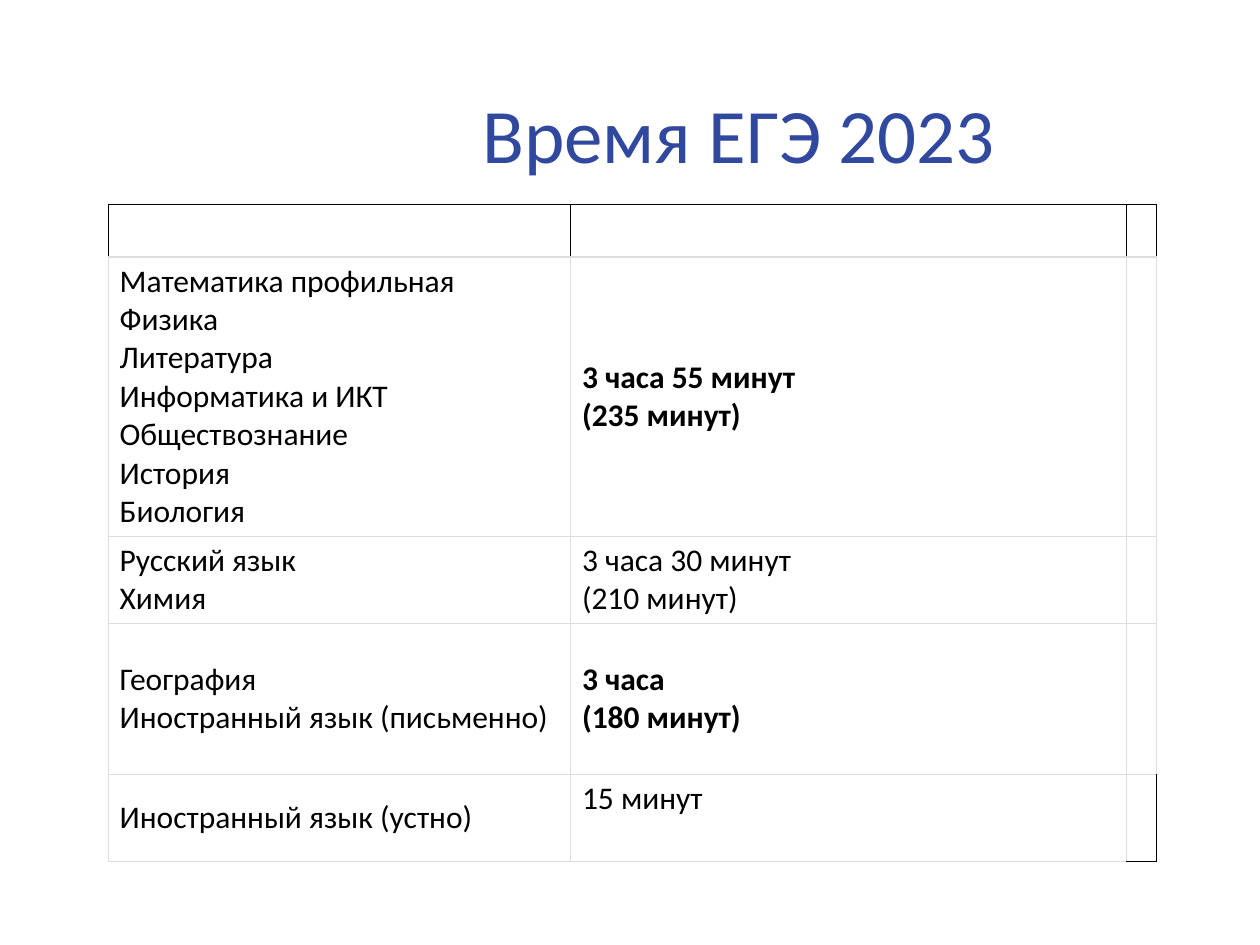
from lxml.etree import SubElement
from pptx import Presentation
from pptx.dml.color import RGBColor
from pptx.enum.text import MSO_ANCHOR, PP_ALIGN
from pptx.oxml.ns import qn
from pptx.util import Inches, Pt

BLUE = RGBColor(0x31, 0x48, 0x9F)
BLACK = RGBColor(0, 0, 0)
WHITE = RGBColor(0xFF, 0xFF, 0xFF)
GREY = RGBColor(0xDD, 0xDD, 0xDD)
FONT = "Calibri"

COLUMN_WIDTHS = [3.67, 4.41, 0.2]
ROW_HEIGHTS = [0.42, 2.1, 0.67, 1.2, 0.67]
EXAMS = [
    (["Математика профильная", "Физика", "Литература", "Информатика и ИКТ",
      "Обществознание", "История", "Биология"],
     ["3 часа 55 минут", "(235 минут)"], True),
    (["Русский язык", "Химия"], ["3 часа 30 минут", "(210 минут)"], False),
    (["География", "Иностранный язык (письменно)"],
     ["3 часа", "(180 минут)"], True),
    (["Иностранный язык (устно)"], ["15 минут", ""], False),
]


def style_run(run, size, color, bold=False):
    run.font.name = FONT
    run.font.size = Pt(size)
    run.font.bold = bold
    run.font.color.rgb = color


def add_title(slide, text):
    title = slide.shapes.title
    title.left, title.top = Inches(1.85), Inches(0.25)
    title.width, title.height = Inches(8.03), Inches(1.61)
    title.text_frame.vertical_anchor = MSO_ANCHOR.MIDDLE
    paragraph = title.text_frame.paragraphs[0]
    paragraph.alignment = PP_ALIGN.CENTER
    run = paragraph.add_run()
    run.text = text
    style_run(run, 44, BLUE)


def set_borders(cell, black_sides):
    properties = cell._tc.get_or_add_tcPr()
    for index, side in enumerate("LRTB"):
        line = SubElement(properties, qn(f"a:ln{side}"), w=str(Pt(0.75)))
        fill = SubElement(line, qn("a:solidFill"))
        color = BLACK if side in black_sides else GREY
        SubElement(fill, qn("a:srgbClr"), val=str(color))
        properties.insert(index, line)


def fill_cell(cell, lines, bold):
    cell.vertical_anchor = MSO_ANCHOR.MIDDLE
    cell.margin_left = cell.margin_right = Inches(0.09)
    cell.margin_top = cell.margin_bottom = Inches(0.04)
    paragraph = cell.text_frame.paragraphs[0]
    for index, line in enumerate(lines):
        if index:
            paragraph.add_line_break()
        if line:
            run = paragraph.add_run()
            run.text = line
            style_run(run, 18, BLACK, bold)


def add_exam_table(slide):
    last_row, last_column = len(ROW_HEIGHTS) - 1, len(COLUMN_WIDTHS) - 1
    table = slide.shapes.add_table(
        len(ROW_HEIGHTS), len(COLUMN_WIDTHS), Inches(0.86), Inches(1.62),
        Inches(sum(COLUMN_WIDTHS)), Inches(sum(ROW_HEIGHTS))).table
    for column, width in zip(table.columns, COLUMN_WIDTHS):
        column.width = Inches(width)
    for r, height in enumerate(ROW_HEIGHTS):
        table.rows[r].height = Inches(height)
        for c in range(len(COLUMN_WIDTHS)):
            cell = table.cell(r, c)
            corner = (r, c) == (last_row, last_column)
            if r == 0 or corner:
                cell.fill.background()
            else:
                cell.fill.solid()
                cell.fill.fore_color.rgb = WHITE
            set_borders(cell, "LRT" if r == 0 else "RB" if corner else "")
    for r, (subjects, duration, bold) in enumerate(EXAMS, start=1):
        fill_cell(table.cell(r, 0), subjects, False)
        fill_cell(table.cell(r, 1), duration, bold)


def main():
    deck = Presentation()
    deck.slide_width, deck.slide_height = Inches(10), Inches(7.5)
    slide = deck.slides.add_slide(deck.slide_layouts[5])
    add_title(slide, "Время ЕГЭ 2023")
    add_exam_table(slide)
    deck.save("out.pptx")


if __name__ == "__main__":
    main()
